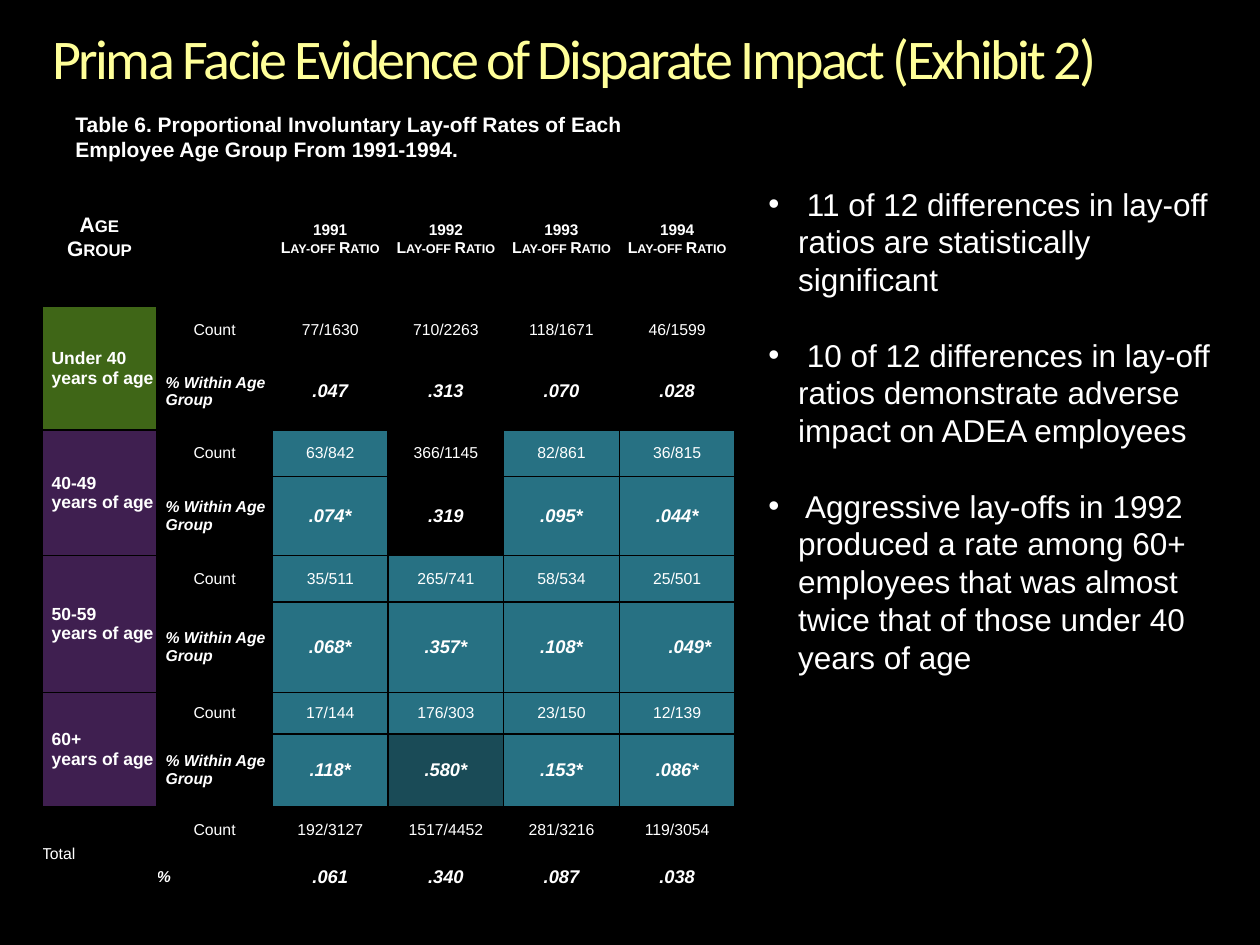
"""Build the slide on lay-off rates by employee age group."""
from lxml.etree import SubElement
from pptx import Presentation
from pptx.dml.color import RGBColor
from pptx.enum.text import MSO_ANCHOR as Anchor, PP_ALIGN as Align
from pptx.oxml import parse_xml
from pptx.oxml.ns import nsdecls, qn
from pptx.util import Pt

BLACK = RGBColor(0x00, 0x00, 0x00)
WHITE = RGBColor(0xFF, 0xFF, 0xFF)
YELLOW = RGBColor(0xFF, 0xFF, 0x99)
GREEN = RGBColor(0x3F, 0x66, 0x17)
PURPLE = RGBColor(0x3F, 0x1F, 0x50)
TEAL = RGBColor(0x27, 0x71, 0x83)
DARK_TEAL = RGBColor(0x1A, 0x4B, 0x57)

YEARS = ["1991", "1992", "1993", "1994"]
COLUMN_WIDTHS = [65.6] + [66.1] * 5
ROW_HEIGHTS = [79.2, 26.5, 44, 26.5, 45.4, 26.5, 51.6, 23.8, 41.6, 26.5, 27.4]
GROUPS = [
    ("Under 40\nyears of age", GREEN,
     ["77/1630", "710/2263", "118/1671", "46/1599"],
     [".047", ".313", ".070", ".028"]),
    ("40-49\nyears of age", PURPLE,
     ["63/842", "366/1145", "82/861", "36/815"],
     [".074*", ".319", ".095*", ".044*"]),
    ("50-59\nyears of age", PURPLE,
     ["35/511", "265/741", "58/534", "25/501"],
     [".068*", ".357*", ".108*", ".049*"]),
    ("60+\nyears of age", PURPLE,
     ["17/144", "176/303", "23/150", "12/139"],
     [".118*", ".580*", ".153*", ".086*"]),
    ("Total", None,
     ["192/3127", "1517/4452", "281/3216", "119/3054"],
     [".061", ".340", ".087", ".038"]),
]
FINDINGS = [
    " 11 of 12 differences in lay-off ratios are statistically significant",
    " 10 of 12 differences in lay-off ratios demonstrate adverse impact on "
    "ADEA employees",
    " Aggressive lay-offs in 1992 produced a rate among 60+ employees that "
    "was almost twice that of those under 40 years of age",
]


def style(para, size, bold=False, italic=False, color=WHITE, name="Arial"):
    for span in para.runs:
        span.font.name = name
        span.font.size = Pt(size)
        span.font.bold = bold
        span.font.italic = italic
        span.font.color.rgb = color


def fill_cell(cell, text, size, bold=False, italic=False, align=Align.CENTER,
              indent=0):
    cell.margin_left = Pt(indent)
    cell.text_frame.text = text
    for para in cell.text_frame.paragraphs:
        para.alignment = align
        style(para, size, bold, italic)


deck = Presentation()
deck.slide_width, deck.slide_height = Pt(720), Pt(540)
page = deck.slides.add_slide(deck.slide_layouts[6])
page.background.fill.solid()
page.background.fill.fore_color.rgb = BLACK

table = page.shapes.add_table(
    len(ROW_HEIGHTS), len(COLUMN_WIDTHS),
    Pt(24), Pt(96), Pt(sum(COLUMN_WIDTHS)), Pt(sum(ROW_HEIGHTS))).table
table.first_row = table.horz_banding = False
for column, width in zip(table.columns, COLUMN_WIDTHS):
    column.width = Pt(width)
for row, height in zip(table.rows, ROW_HEIGHTS):
    row.height = Pt(height)

for cell in table.iter_cells():
    cell.margin_left = cell.margin_right = Pt(0)
    cell.margin_top = cell.margin_bottom = Pt(0)
    cell.vertical_anchor = Anchor.MIDDLE
    cell.fill.background()
    properties = cell._tc.get_or_add_tcPr()
    for position, side in enumerate(["lnL", "lnR", "lnT", "lnB"]):
        properties.insert(position, parse_xml(
            f'<a:{side} {nsdecls("a")} w="{Pt(1)}"><a:solidFill>'
            f'<a:srgbClr val="{BLACK}"/></a:solidFill></a:{side}>'))

fill_cell(table.cell(0, 0), "Age\nGroup", 12, bold=True)
for column, year in enumerate(YEARS, 2):
    heading = table.cell(0, column)
    fill_cell(heading, f"{year}\nLay-off Ratio", 9, bold=True)
    style(heading.text_frame.paragraphs[0], 11, bold=True)
for column in [0, 2, 3, 4, 5]:
    for para in table.cell(0, column).text_frame.paragraphs:
        for span in para.runs:
            span.font._element.set("cap", "small")

for group, (label, color, counts, rates) in enumerate(GROUPS):
    top = 1 + 2 * group
    is_total = color is None
    group_cell = table.cell(top, 0)
    group_cell.merge(table.cell(top + 1, 0))
    fill_cell(group_cell, label, 9 if is_total else 10, bold=not is_total,
              align=Align.LEFT, indent=0 if is_total else 5.5)
    if not is_total:
        group_cell.fill.solid()
        group_cell.fill.fore_color.rgb = color
    fill_cell(table.cell(top, 1), "Count", 9)
    fill_cell(table.cell(top + 1, 1),
              "%" if is_total else "% Within Age\nGroup", 9, True, True,
              Align.LEFT, 0 if is_total else 5)
    for column, (count, rate) in enumerate(zip(counts, rates), 2):
        fill_cell(table.cell(top, column), count, 9)
        fill_cell(table.cell(top + 1, column), rate, 10.5, True, True,
                  indent=14.6 if rate == ".049*" else 0)
        if rate.endswith("*"):
            for row in [top, top + 1]:
                table.cell(row, column).fill.solid()
                table.cell(row, column).fill.fore_color.rgb = TEAL
        if rate == ".580*":
            table.cell(top + 1, column).fill.fore_color.rgb = DARK_TEAL

title = page.shapes.add_textbox(Pt(30), Pt(18), Pt(660), Pt(34.6)).text_frame
title.word_wrap = True
title.margin_left = title.margin_right = Pt(0)
title.margin_top = title.margin_bottom = Pt(0)
title.text = "Prima Facie Evidence of Disparate Impact (Exhibit 2)"
title.paragraphs[0].line_spacing = 0.9
style(title.paragraphs[0], 32, color=YELLOW, name="Calibri")
title.paragraphs[0].runs[0].font._element.set("spc", "-150")

caption = page.shapes.add_textbox(Pt(0), Pt(60), Pt(378), Pt(36)).text_frame
caption.word_wrap = True
caption.text = ("Table 6. Proportional Involuntary Lay-off Rates of Each\n"
                "Employee Age Group From 1991-1994.")
for para in caption.paragraphs:
    para._p.get_or_add_pPr().set("indent", str(Pt(36)))
    style(para, 12, bold=True)

findings = page.shapes.add_textbox(Pt(432), Pt(102), Pt(276), Pt(269)).text_frame
findings.word_wrap = True
findings.text = "\n".join(FINDINGS)
for number, para in enumerate(findings.paragraphs):
    properties = para._p.get_or_add_pPr()
    properties.set("marL", str(Pt(17)))
    properties.set("indent", str(-Pt(17)))
    SubElement(properties, qn("a:buFont")).set("typeface", "Arial")
    SubElement(properties, qn("a:buChar")).set("char", "•")
    para.space_before = Pt(21.5 if number else 0)
    style(para, 18)

deck.save("out.pptx")
